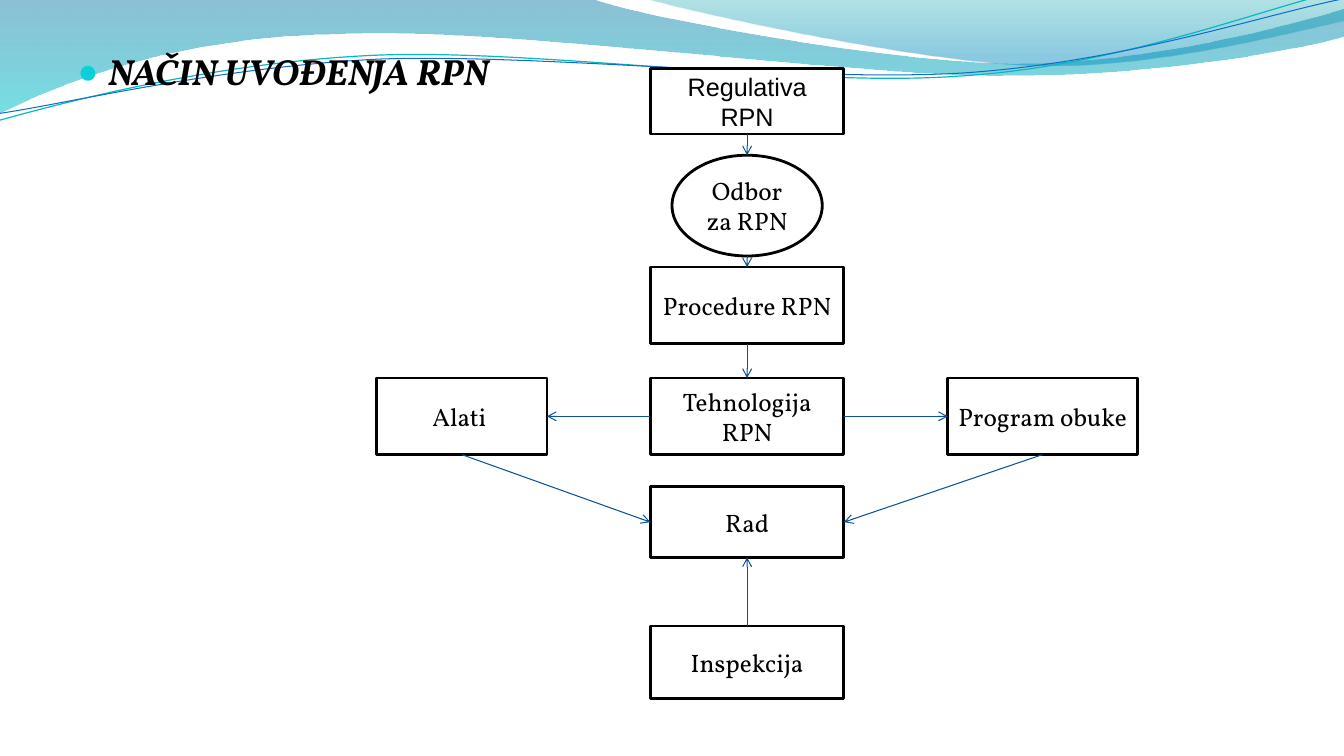
from dataclasses import dataclass
from lxml.etree import SubElement
from pptx import Presentation
from pptx.dml.color import RGBColor
from pptx.enum.shapes import MSO_CONNECTOR, MSO_SHAPE
from pptx.enum.text import MSO_ANCHOR, PP_ALIGN
from pptx.oxml import parse_xml
from pptx.oxml.ns import nsdecls, qn
from pptx.util import Inches, Pt


@dataclass(frozen=True)
class Theme:
    ink: str = "000000"
    paper: str = "FFFFFF"
    arrow: str = "095295"
    bullet: str = "0BD0D9"
    serif: str = "Vollkorn"
    sans: str = "Arial"
    head: int = 26
    label: int = 18


THEME = Theme()

# Wave outlines: a start point, then lines (2 numbers) or curves (6 numbers)
BANDS = [
    ([(0, 0), (5.87, -0.01), (6.34, 0.17, 8.85, 0.63, 10.11, 0.63),
      (11.37, 0.63, 12.78, 0.26, 13.33, 0.09), (13.35, 0.36),
      (13.11, 0.44, 11.6, 0.76, 9.94, 0.75),
      (8.29, 0.75, 5.09, 0.28, 3.43, 0.34),
      (1.72, 0.36, 0.61, 0.83, -0.01, 1.13), (0, 0)],
     [(0, "0074A1", 45), (1, "00C6CF", 55)]),
    ([(6.39, -0.01), (6.79, 0.11, 9.09, 0.62, 10.25, 0.65),
      (11.41, 0.69, 12.82, 0.32, 13.33, 0.21), (13.33, 0), (6.39, -0.01)],
     [(0, "00A1A9", 30), (0.8, "008BBF", 45)]),
]
STRANDS = [
    ([(-0.03, 0.88), (0.63, 0.73, 2.11, 0.41, 3.69, 0.41),
      (5.28, 0.41, 7.88, 0.93, 9.49, 0.89),
      (11.09, 0.87, 12.54, 0.36, 13.33, 0.22)], "0AB8BF", 0.85),
    ([(-0.02, 0.81), (0.62, 0.75, 2.18, 0.45, 3.78, 0.45),
      (5.37, 0.47, 7.95, 0.88, 9.54, 0.86),
      (11.14, 0.83, 12.56, 0.42, 13.36, 0.3)], "0F6FC6", 0.75),
]
TILT = 357.3

# Flow boxes: text, shift from the centre line, top, width, height
NODES = [
    ("Regulativa RPN", 0, 0, 1.92, 0.65),
    ("Odbor za RPN", 0, 0.86, 1.49, 1),
    ("Alati ", -2.83, 3.07, 1.69, 0.76),
    ("Procedure RPN", 0, 1.97, 1.92, 0.76),
    ("Program obuke", 2.93, 3.07, 1.88, 0.76),
    ("Tehnologija RPN", 0, 3.07, 1.92, 0.76),
    ("Rad", 0, 4.15, 1.92, 0.7),
    ("Inspekcija", 0, 5.53, 1.92, 0.72),
]
TOP, LEFT, BOTTOM, RIGHT = range(4)
LINKS = [
    ("Regulativa RPN", BOTTOM, "Odbor za RPN", TOP),
    ("Odbor za RPN", BOTTOM, "Procedure RPN", TOP),
    ("Procedure RPN", BOTTOM, "Tehnologija RPN", TOP),
    ("Tehnologija RPN", LEFT, "Alati ", RIGHT),
    ("Tehnologija RPN", RIGHT, "Program obuke", LEFT),
    ("Alati ", BOTTOM, "Rad", LEFT),
    ("Program obuke", BOTTOM, "Rad", RIGHT),
    ("Inspekcija", TOP, "Rad", BOTTOM),
]


def color(code):
    return RGBColor.from_string(code)


def style(run, font, size):
    run.font.name = font
    run.font.size = Pt(size)
    run.font.color.rgb = color(THEME.ink)


def outline(slide, box, route, close):
    """Draw all knots as lines, then join each curve's three into one."""
    spots = [(Inches(box[0] + part[i]), Inches(box[1] + part[i + 1]))
             for part in route for i in range(0, len(part), 2)]
    pen = slide.shapes.build_freeform(*spots[0])
    pen.add_line_segments(spots[1:], close=close)
    shape = pen.convert_to_shape()
    shape.shadow.inherit = False
    steps = iter(list(shape._element.iter(qn("a:lnTo"))))
    for part in route[1:]:
        first = next(steps)
        if len(part) == 6:
            first.tag = qn("a:cubicBezTo")
            for _ in range(2):
                step = next(steps)
                first.append(step[0])
                step.getparent().remove(step)
    return shape


def add_waves(slide, box):
    # Filled bands
    for route, stops in BANDS:
        band = outline(slide, box, route, True)
        band.line.fill.background()
        band.fill.gradient()
        band.fill.gradient_angle = 270
        for stop, (place, code, _) in zip(band.fill.gradient_stops, stops):
            stop.position = place
            stop.color.rgb = color(code)
        tints = band._element.spPr.iter(qn("a:srgbClr"))
        for tint, (_, _, alpha) in zip(tints, stops):
            SubElement(tint, qn("a:alpha"), val=str(alpha * 1000))
    # Thin strands
    for route, code, width in STRANDS:
        strand = outline(slide, box, route, False)
        strand.rotation = TILT
        strand.fill.background()
        strand.line.color.rgb = color(code)
        strand.line.width = Pt(width)


def add_node(slide, kind, text, box):
    node = slide.shapes.add_shape(kind, *map(Inches, box))
    node.shadow.inherit = False
    node.fill.solid()
    node.fill.fore_color.rgb = color(THEME.paper)
    node.line.color.rgb = color(THEME.ink)
    node.line.width = Pt(2)
    frame = node.text_frame
    frame.word_wrap = True
    frame.vertical_anchor = MSO_ANCHOR.MIDDLE
    frame.text = text
    line = frame.paragraphs[0]
    line.alignment = PP_ALIGN.CENTER
    font = THEME.sans if text.startswith("Regulativa") else THEME.serif
    style(line.runs[0], font, THEME.label)
    return node


def add_link(slide, start, side, end, goal):
    link = slide.shapes.add_connector(MSO_CONNECTOR.STRAIGHT, 0, 0, 0, 0)
    link.begin_connect(start, side)
    link.end_connect(end, goal)
    # An ellipse has eight sites, so its bottom is number 4
    if start.auto_shape_type == MSO_SHAPE.OVAL:
        next(link._element.iter(qn("a:stCxn"))).set("idx", str(side * 2))
    link.line.color.rgb = color(THEME.arrow)
    link.line.width = Pt(0.75)
    SubElement(link.line._get_or_add_ln(), qn("a:tailEnd"), type="arrow")
    SubElement(link._element.spPr, qn("a:effectLst"))


def add_flow(slide, box):
    left, top, width, _ = box
    mid = left + width / 2
    nodes = {}
    for text, shift, y, w, h in NODES:
        kind = MSO_SHAPE.OVAL if text.startswith("Odbor") else MSO_SHAPE.RECTANGLE
        place = (mid + shift - w / 2, top + y, w, h)
        nodes[text] = add_node(slide, kind, text, place)
    for start, side, end, goal in LINKS:
        add_link(slide, nodes[start], side, nodes[end], goal)


def add_head(slide, box):
    body = slide.placeholders[1]
    body.left, body.top, body.width, body.height = map(Inches, box)
    body.text_frame.text = "NAČIN UVOĐENJA RPN"
    line = body.text_frame.paragraphs[0]
    run = line.runs[0]
    style(run, THEME.serif, THEME.head)
    run.font.bold = run.font.italic = True
    # Bullet and hanging indent
    props = line._p.get_or_add_pPr()
    props.set("marL", str(Inches(0.3)))
    props.set("indent", str(Inches(-0.3)))
    for mark in (f'<a:buClr {nsdecls("a")}><a:srgbClr val="{THEME.bullet}"/></a:buClr>',
                 f'<a:buSzPct {nsdecls("a")} val="95000"/>',
                 f'<a:buFont {nsdecls("a")} typeface="{THEME.sans}"/>',
                 f'<a:buChar {nsdecls("a")} char="●"/>'):
        props.append(parse_xml(mark))
    slide.shapes._spTree.append(body._element)


def main():
    deck = Presentation()
    deck.slide_width, deck.slide_height = Inches(13.33), Inches(7.5)
    slide = deck.slides.add_slide(deck.slide_layouts[1])
    title = slide.shapes.title._element
    title.getparent().remove(title)
    add_waves(slide, (0, 0, 13.33, 1.2))
    add_flow(slide, (3.54, 0.68, 7.74, 6.25))
    add_head(slide, (0.67, 0.44, 12, 6.82))
    deck.save("out.pptx")


if __name__ == "__main__":
    main()
